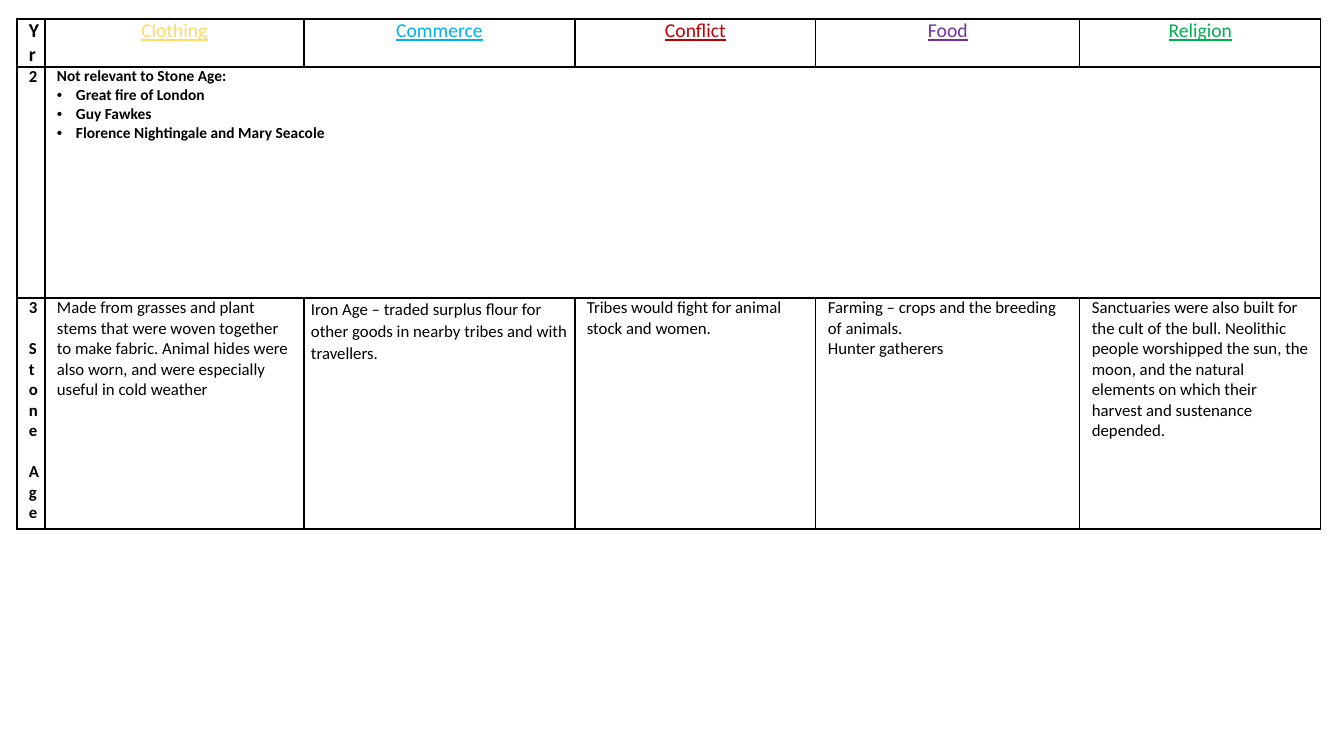
import dataclasses

import lxml.etree
import pptx
import pptx.dml.color
import pptx.enum.text
import pptx.oxml.ns
import pptx.table
import pptx.util

EMU_PER_PX = 914400 / 100.8
LEFT, TOP = 17, 19
COLUMN_WIDTHS = (28, 259, 271, 241, 264, 241)
ROW_HEIGHTS = (48, 231, 231)
BULLET_INDENT = 19
WIDE_INSET, NARROW_INSET = 12, 7
BLACK, WHITE = "000000", "FFFFFF"
CENTER = pptx.enum.text.PP_ALIGN.CENTER
LEFT_ALIGNED = pptx.enum.text.PP_ALIGN.LEFT
LINE_GAP = pptx.util.Pt(14.65)


@dataclasses.dataclass(frozen=True)
class Line:
    text: str
    size: int = 12
    bold: bool = False
    underline: bool = False
    color: str = BLACK
    bullet: bool = False
    layout: dict = dataclasses.field(default_factory=dict)


@dataclasses.dataclass(frozen=True)
class CellText:
    row: int
    column: int
    lines: tuple[Line, ...]
    inset: int = WIDE_INSET


def px(length: int) -> pptx.util.Emu:
    return pptx.util.Emu(round(length * EMU_PER_PX))


def rgb(color: str) -> pptx.dml.color.RGBColor:
    return pptx.dml.color.RGBColor.from_string(color)


def apply_format(target: object, values: dict) -> None:
    for name, value in values.items():
        setattr(target, name, value)


def year_line(text: str, size: int = 12, **layout) -> Line:
    return Line(text, size, bold=True, layout={"alignment": CENTER, **layout})


def heading(text: str, color: str) -> Line:
    return Line(text, 14, underline=True, color=color, layout={"alignment": CENTER})


def history_line(text: str, bullet: bool = True) -> Line:
    return Line(text, 11, bold=True, bullet=bullet)


HEADINGS = (
    ("Clothing", "FFD966"),
    ("Commerce", "00B0F0"),
    ("Conflict", "C00000"),
    ("Food", "7030A0"),
    ("Religion", "00B050"),
)

CELLS = (
    CellText(0, 0, (year_line("Yr", 14),)),
    *(CellText(0, column, (heading(*item),)) for column, item in enumerate(HEADINGS, 1)),
    CellText(1, 0, (year_line("2"),)),
    CellText(1, 1, (
        history_line("Not relevant to Stone Age:", bullet=False),
        history_line("Great fire of London"),
        history_line("Guy Fawkes"),
        history_line("Florence Nightingale and Mary Seacole"),
    )),
    CellText(2, 0, (
        year_line("3"),
        year_line("Stone", space_before=LINE_GAP),
        year_line("Age", space_before=LINE_GAP),
    )),
    CellText(2, 1, (Line(
        "Made from grasses and plant stems that were woven together to make fabric. "
        "Animal hides were also worn, and were especially useful in cold weather"
    ),)),
    CellText(2, 2, (Line(
        "Iron Age – traded surplus flour for other goods in nearby tribes and with travellers.",
        layout={"line_spacing": 1.07},
    ),), NARROW_INSET),
    CellText(2, 3, (Line("Tribes would fight for animal stock and women."),)),
    CellText(2, 4, (
        Line("Farming – crops and the breeding of animals."),
        Line("Hunter gatherers"),
    )),
    CellText(2, 5, (Line(
        "Sanctuaries were also built for the cult of the bull. Neolithic people worshipped "
        "the sun, the moon, and the natural elements on which their harvest and sustenance depended."
    ),)),
)


def add_child(parent, tag: str, **attributes: str):
    child = lxml.etree.SubElement(parent, pptx.oxml.ns.qn(tag))
    for name, value in attributes.items():
        child.set(name, value)
    return child


def style_cell(cell: pptx.table._Cell) -> None:
    cell.fill.solid()
    cell.fill.fore_color.rgb = rgb(WHITE)
    properties = cell._tc.get_or_add_tcPr()
    for position, side in enumerate(("a:lnL", "a:lnR", "a:lnT", "a:lnB")):
        border = add_child(properties, side, w=str(pptx.util.Pt(1)))
        add_child(add_child(border, "a:solidFill"), "a:srgbClr", val=BLACK)
        properties.insert(position, border)


def write_line(paragraph, line: Line) -> None:
    if line.bullet:
        properties = paragraph._p.get_or_add_pPr()
        properties.set("marL", str(px(BULLET_INDENT)))
        properties.set("indent", str(-px(BULLET_INDENT)))
        add_child(properties, "a:buFont", typeface="Arial")
        add_child(properties, "a:buChar", char="•")
    apply_format(paragraph, {"alignment": LEFT_ALIGNED, **line.layout})
    run = paragraph.add_run()
    run.text = line.text
    apply_format(run.font, {
        "name": "Calibri",
        "size": pptx.util.Pt(line.size),
        "bold": line.bold,
        "underline": line.underline,
    })
    run.font.color.rgb = rgb(line.color)


def write_cell(table: pptx.table.Table, content: CellText) -> None:
    cell = table.cell(content.row, content.column)
    apply_format(cell, {
        "margin_left": px(content.inset),
        "margin_right": px(content.inset),
        "margin_top": 0,
        "margin_bottom": 0,
        "vertical_anchor": pptx.enum.text.MSO_ANCHOR.TOP,
    })
    frame = cell.text_frame
    for index, line in enumerate(content.lines):
        write_line(frame.add_paragraph() if index else frame.paragraphs[0], line)


def add_topic_table(slide) -> None:
    table = slide.shapes.add_table(
        len(ROW_HEIGHTS), len(COLUMN_WIDTHS),
        px(LEFT), px(TOP), px(sum(COLUMN_WIDTHS)), px(sum(ROW_HEIGHTS)),
    ).table
    apply_format(table, {"first_row": False, "horz_banding": False})
    for column, width in zip(table.columns, COLUMN_WIDTHS):
        column.width = px(width)
    for row, height in zip(table.rows, ROW_HEIGHTS):
        row.height = px(height)
    for cell in table.iter_cells():
        style_cell(cell)
    table.cell(1, 1).merge(table.cell(1, len(COLUMN_WIDTHS) - 1))
    for content in CELLS:
        write_cell(table, content)


def main() -> None:
    presentation = pptx.Presentation()
    apply_format(presentation, {"slide_width": px(1344), "slide_height": px(756)})
    slide = presentation.slides.add_slide(presentation.slide_layouts[6])
    add_topic_table(slide)
    presentation.save("out.pptx")


if __name__ == "__main__":
    main()
